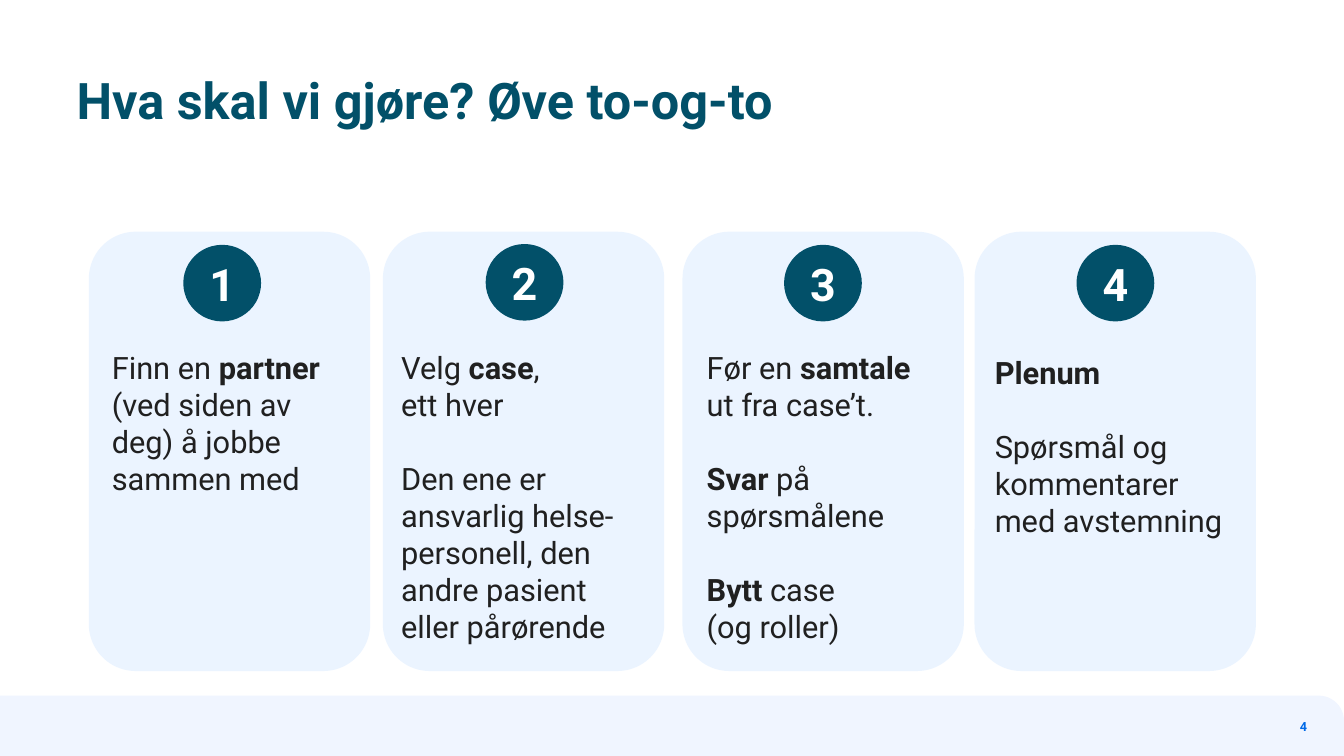
from dataclasses import dataclass

from lxml import etree
from pptx import Presentation
from pptx.dml.color import RGBColor
from pptx.enum.shapes import MSO_SHAPE as Shape
from pptx.enum.text import MSO_ANCHOR as Anchor, MSO_AUTO_SIZE as AutoSize, PP_ALIGN as Align
from pptx.oxml.ns import qn
from pptx.util import Cm, Pt

TEAL = RGBColor(0x02, 0x50, 0x69)
CARD_BLUE = RGBColor(0xC7, 0xE1, 0xFF)
FOOTER_BLUE = RGBColor(0xF0, 0xF5, 0xFF)
NUMBER_BLUE = RGBColor(0x00, 0x69, 0xE7)
INK = RGBColor(0x20, 0x20, 0x20)
WHITE = RGBColor(0xFF, 0xFF, 0xFF)

TITLE = {"name": "Roboto", "size": Pt(36), "bold": True}
BODY = {"name": "Roboto", "size": Pt(22), "bold": False}
BADGE = {"name": "Roboto", "size": Pt(32), "bold": True}
PAGE = {"name": "Roboto", "size": Pt(9), "bold": True}
PARAGRAPH_GAP = Pt(26.4)


@dataclass
class Step:
    """One card; lengths in cm, *stars* mark bold text."""
    card_x: float
    badge_x: float
    text_x: float
    text_h: float
    paragraphs: tuple[str, ...]
    badge_y: float = 6.17
    text_y: float = 8.79


STEPS = [
    Step(2.24, 4.62, 2.82, 3.76,
         ("Finn en *partner*\n(ved siden av deg) å jobbe\nsammen med",)),
    Step(9.65, 12.24, 10.11, 7.52,
         ("Velg *case*,\nett hver",
          "Den ene er ansvarlig helse-personell, den andre pasient eller pårørende"),
         badge_y=6.15),
    Step(17.2, 19.76, 17.81, 7.52,
         ("Før en *samtale* ut fra case’t.", "*Svar* på spørsmålene",
          "*Bytt* case\n(og roller)")),
    Step(24.56, 27.13, 25.07, 4.7,
         ("*Plenum*", "Spørsmål og kommentarer med avstemning"), text_y=8.92),
]


def set_font(font, style: dict, color: RGBColor) -> None:
    for key, value in style.items():
        setattr(font, key, value)
    font.color.rgb = color


def set_frame(tf, anchor=Anchor.TOP) -> None:
    frame = {"margin_left": 0, "margin_right": 0, "margin_top": 0, "margin_bottom": 0,
             "word_wrap": True, "auto_size": AutoSize.NONE, "vertical_anchor": anchor}
    for key, value in frame.items():
        setattr(tf, key, value)


def write_line(tf, text: str, style: dict, color: RGBColor, align=Align.LEFT) -> None:
    p = tf.paragraphs[0]
    p.alignment = align
    r = p.add_run()
    r.text = text
    set_font(r.font, style, color)


def write_marked(p, text: str) -> None:
    for i, part in enumerate(text.split("*")):
        for j, line in enumerate(part.split("\n")):
            if j:
                p.add_line_break()
            if line:
                r = p.add_run()
                r.text = line
                set_font(r.font, BODY | {"bold": i % 2 == 1}, INK)


def add_plain_shape(s, kind, x: float, y: float, w: float, h: float, color: RGBColor):
    sp = s.shapes.add_shape(kind, Cm(x), Cm(y), Cm(w), Cm(h))
    sp.shadow.inherit = False
    sp.fill.solid()
    sp.fill.fore_color.rgb = color
    sp.line.fill.background()
    return sp


def add_card(s, step: Step) -> None:
    sp = add_plain_shape(s, Shape.ROUNDED_RECTANGLE, step.card_x, 5.84, 7.09, 11.07, CARD_BLUE)
    color = sp.fill._xPr.find(qn("a:solidFill"))[0]
    etree.SubElement(color, qn("a:alpha")).set("val", "34000")


def add_step_text(s, step: Step) -> None:
    box = s.shapes.add_textbox(Cm(step.text_x), Cm(step.text_y), Cm(5.89), Cm(step.text_h))
    tf = box.text_frame
    set_frame(tf)
    for i, text in enumerate(step.paragraphs):
        p = tf.add_paragraph() if i else tf.paragraphs[0]
        if i:
            p.space_before = PARAGRAPH_GAP
        write_marked(p, text)


def add_badge(s, step: Step, number: int) -> None:
    sp = add_plain_shape(s, Shape.FLOWCHART_CONNECTOR, step.badge_x, step.badge_y,
                         1.96, 1.93, TEAL)
    set_frame(sp.text_frame, Anchor.MIDDLE)
    write_line(sp.text_frame, str(number), BADGE, WHITE, Align.CENTER)


def main() -> None:
    prs = Presentation()
    prs.slide_width, prs.slide_height = Cm(33.87), Cm(19.05)
    s = prs.slides.add_slide(prs.slide_layouts[5])

    # Footer band and page number
    band = add_plain_shape(s, Shape.ROUND_1_RECTANGLE, 0, 17.53, 33.87, 1.52, FOOTER_BLUE)
    band.adjustments[0] = 0.417
    page = s.shapes.add_textbox(Cm(28.93), Cm(17.96), Cm(4.01), Cm(0.69))
    set_frame(page.text_frame, Anchor.MIDDLE)
    write_line(page.text_frame, "4", PAGE, NUMBER_BLUE, Align.RIGHT)

    # Title
    title = s.shapes.title
    title.left, title.top, title.width, title.height = Cm(1.93), Cm(1.73), Cm(27), Cm(2.9)
    set_frame(title.text_frame)
    write_line(title.text_frame, "Hva skal vi gjøre? Øve to-og-to", TITLE, TEAL)

    # Step cards
    for number, step in enumerate(STEPS, start=1):
        add_card(s, step)
        add_step_text(s, step)
        add_badge(s, step, number)

    prs.save("out.pptx")


if __name__ == "__main__":
    main()
